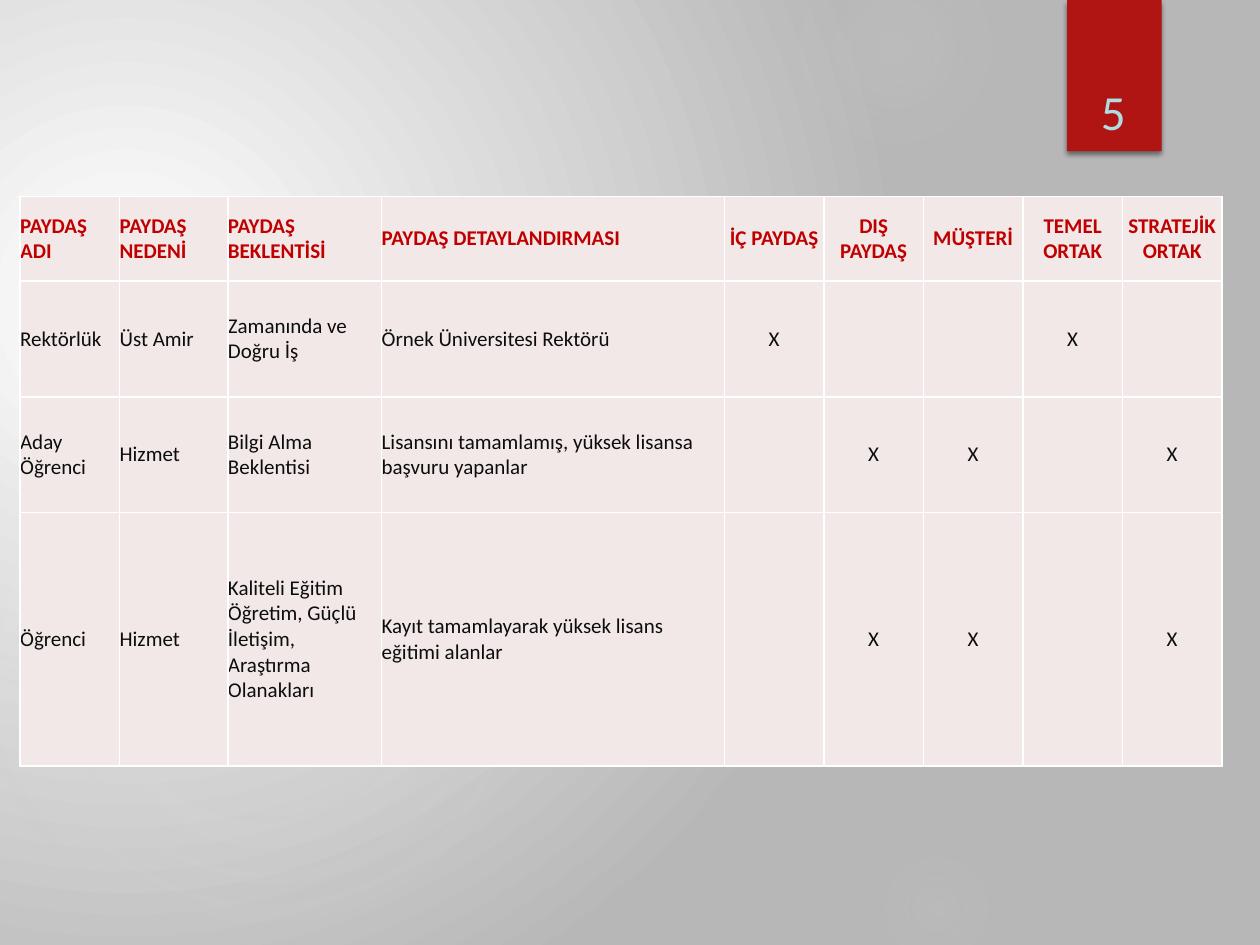
from dataclasses import dataclass

from lxml.etree import SubElement
from pptx import Presentation
from pptx.dml.color import RGBColor
from pptx.enum.shapes import MSO_SHAPE
from pptx.enum.text import MSO_ANCHOR, PP_ALIGN
from pptx.oxml import parse_xml
from pptx.oxml.ns import nsdecls, qn
from pptx.util import Inches, Pt

COLORS = {
    "white": "FFFFFF",
    "backdrop": "B7B7B7",
    "glow": "D9D9D9",
    "ribbon": "B01513",
    "number": "B1DDE0",
    "cell": "F2E8E7",
    "heading": "C00000",
    "body": "0C0D0D",
    "shadow": "000000",
}
FONT = "Calibri"


@dataclass
class Glow:
    left: float
    top: float
    size: float
    stops: tuple  # (position %, opacity %)


@dataclass
class Stakeholder:
    name: str
    reason: str
    expectation: str
    detail: str
    roles: str  # one mark per role column, "-" where none

    def cells(self) -> list[str]:
        marks = [mark.replace("-", "") for mark in self.roles]
        return [self.name, self.reason, self.expectation, self.detail, *marks]


GLOWS = [
    Glow(6.89, 1.83, 3.08, ((0, 7), (36, 6), (69, 0))),
    Glow(6.22, -0.5, 1.75, ((0, 14), (36, 7), (73, 0))),
    Glow(6.89, 6.67, 1.08, ((0, 9), (36, 5), (66, 0))),
    Glow(-0.17, 2.92, 4.58, ((0, 11), (36, 10), (75, 0))),
    Glow(-0.92, 3.17, 2.58, ((0, 8), (36, 8), (72, 0))),
]
HEADINGS = [
    "PAYDAŞ ADI", "PAYDAŞ NEDENİ", "PAYDAŞ BEKLENTİSİ", "PAYDAŞ DETAYLANDIRMASI",
    "İÇ PAYDAŞ", "DIŞ PAYDAŞ", "MÜŞTERİ", "TEMEL ORTAK", "STRATEJİK ORTAK",
]
STAKEHOLDERS = [
    Stakeholder("Rektörlük", "Üst Amir", "Zamanında ve Doğru İş",
                "Örnek Üniversitesi Rektörü", "X--X-"),
    Stakeholder("Aday Öğrenci", "Hizmet", "Bilgi Alma Beklentisi",
                "Lisansını tamamlamış, yüksek lisansa başvuru yapanlar", "-XX-X"),
    Stakeholder("Öğrenci", "Hizmet",
                "Kaliteli Eğitim Öğretim, Güçlü İletişim, Araştırma Olanakları",
                "Kayıt tamamlayarak yüksek lisans eğitimi alanlar", "-XX-X"),
]
TEXT_COLUMNS = 4
COLUMN_WIDTHS = [0.79, 0.86, 1.22, 2.72] + [0.79] * 5
ROW_HEIGHTS = [0.67, 0.92, 0.92, 2.01]


def rgb(name: str) -> RGBColor:
    return RGBColor.from_string(COLORS[name])


def radial_fill(stops: list[tuple], focus: tuple):
    """Circular gradient from (position, colour, opacity) stops, in percent."""
    stop_xml = "".join(
        f'<a:gs pos="{pos * 1000}"><a:srgbClr val="{COLORS[color]}">'
        f'<a:alpha val="{opacity * 1000}"/></a:srgbClr></a:gs>'
        for pos, color, opacity in stops
    )
    left, top, right, bottom = (side * 1000 for side in focus)
    return parse_xml(
        f'<a:gradFill {nsdecls("a")} rotWithShape="1"><a:gsLst>{stop_xml}</a:gsLst>'
        f'<a:path path="circle"><a:fillToRect l="{left}" t="{top}" r="{right}" '
        f'b="{bottom}"/></a:path></a:gradFill>'
    )


def swap_gradient(owner, gradient) -> None:
    placeholder_fill = owner.find(qn("a:gradFill"))
    owner.replace(placeholder_fill, gradient)


def write(frame, text: str, align, size: int, color: str, bold: bool = False) -> None:
    paragraph = frame.paragraphs[0]
    paragraph.alignment = align
    run = paragraph.add_run()
    run.text = text
    for attribute, value in {"name": FONT, "size": Pt(size), "bold": bold}.items():
        setattr(run.font, attribute, value)
    run.font.color.rgb = rgb(color)


def draw_background(slide) -> None:
    slide.background.fill.gradient()
    background = slide.element.xpath("p:cSld/p:bg/p:bgPr")[0]
    swap_gradient(background, radial_fill(
        [(0, "white", 100), (100, "backdrop", 100)], (45, 65, 125, 100)))


def draw_glow(slide, glow: Glow) -> None:
    circle = slide.shapes.add_shape(
        MSO_SHAPE.OVAL, *map(Inches, (glow.left, glow.top, glow.size, glow.size)))
    circle.shadow.inherit = False
    circle.line.fill.background()
    circle.fill.gradient()
    stops = [(pos, "glow", opacity) for pos, opacity in glow.stops]
    swap_gradient(circle.element.spPr, radial_fill(stops, (50, 50, 50, 50)))


def draw_page_number(slide, number: str) -> None:
    ribbon = slide.shapes.add_shape(
        MSO_SHAPE.RECTANGLE, *map(Inches, (8.47, 0, 0.75, 1.2)))
    ribbon.fill.solid()
    ribbon.fill.fore_color.rgb = rgb("ribbon")
    ribbon.line.fill.background()
    ribbon.shadow.inherit = False
    effects = ribbon.element.spPr.find(qn("a:effectLst"))
    shadow = SubElement(effects, qn("a:outerShdw"), blurRad=str(Pt(3)),
                        dist=str(Pt(2)), dir="5400000", rotWithShape="0")
    shadow_color = SubElement(shadow, qn("a:srgbClr"), val=COLORS["shadow"])
    SubElement(shadow_color, qn("a:alpha"), val="45000")

    number_box = slide.shapes.add_textbox(*map(Inches, (8.49, 0.32, 0.69, 0.84)))
    number_box.text_frame.word_wrap = True
    number_box.text_frame.vertical_anchor = MSO_ANCHOR.BOTTOM
    write(number_box.text_frame, number, PP_ALIGN.CENTER, 28, "number")


def format_cell(cell) -> None:
    cell_format = {f"margin_{side}": 0 for side in ("left", "top", "right", "bottom")}
    cell_format["vertical_anchor"] = MSO_ANCHOR.MIDDLE
    for attribute, value in cell_format.items():
        setattr(cell, attribute, value)
    cell.fill.solid()
    cell.fill.fore_color.rgb = rgb("cell")
    # Borders come before the fill in the cell properties
    properties = cell._tc.get_or_add_tcPr()
    for position, edge in enumerate(("lnL", "lnR", "lnT", "lnB")):
        properties.insert(position, parse_xml(
            f'<a:{edge} {nsdecls("a")} w="{Pt(1)}"><a:solidFill>'
            f'<a:srgbClr val="{COLORS["white"]}"/></a:solidFill></a:{edge}>'))


def draw_stakeholder_table(slide) -> None:
    rows = [HEADINGS] + [stakeholder.cells() for stakeholder in STAKEHOLDERS]
    table = slide.shapes.add_table(
        len(rows), len(HEADINGS), Inches(0.16), Inches(1.56),
        Inches(sum(COLUMN_WIDTHS)), Inches(sum(ROW_HEIGHTS))).table
    for column, width in zip(table.columns, COLUMN_WIDTHS):
        column.width = Inches(width)
    for row, height in zip(table.rows, ROW_HEIGHTS):
        row.height = Inches(height)
    for r, texts in enumerate(rows):
        for c, text in enumerate(texts):
            cell = table.cell(r, c)
            format_cell(cell)
            if text:
                align = PP_ALIGN.LEFT if c < TEXT_COLUMNS else PP_ALIGN.CENTER
                color = "body" if r else "heading"
                write(cell.text_frame, text, align, 12, color, bold=r == 0)


def main() -> None:
    presentation = Presentation()
    presentation.slide_width, presentation.slide_height = Inches(10), Inches(7.5)
    slide = presentation.slides.add_slide(presentation.slide_layouts[6])

    # Backdrop
    draw_background(slide)
    for glow in GLOWS:
        draw_glow(slide, glow)

    # Content
    draw_page_number(slide, "5")
    draw_stakeholder_table(slide)
    presentation.save("out.pptx")


if __name__ == "__main__":
    main()
